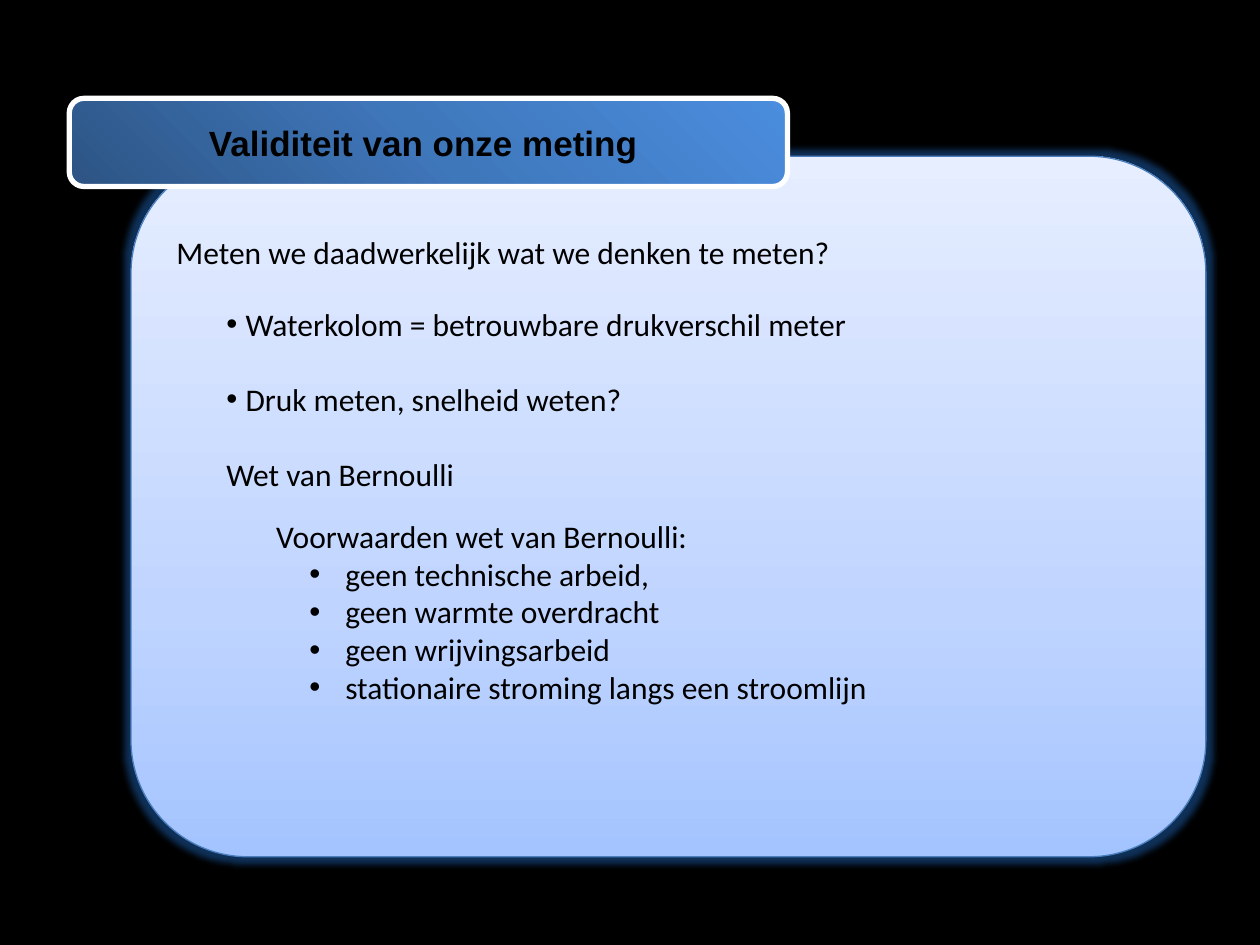
from lxml import etree
from pptx import Presentation
from pptx.dml.color import RGBColor
from pptx.enum.shapes import MSO_SHAPE
from pptx.enum.text import MSO_ANCHOR, MSO_AUTO_SIZE, PP_ALIGN
from pptx.oxml.ns import qn
from pptx.util import Pt

ROUNDED = MSO_SHAPE.ROUNDED_RECTANGLE
BLACK = RGBColor(0x00, 0x00, 0x00)
WHITE = RGBColor(0xFF, 0xFF, 0xFF)
PANEL_LINE = RGBColor(0x4B, 0x7E, 0xBC)
GLOW = RGBColor(0x25, 0x7A, 0xDE)
PANEL_STOPS = [
    (0, RGBColor(0xA4, 0xC4, 0xFF)),
    (35, RGBColor(0xBF, 0xD4, 0xFF)),
    (100, RGBColor(0xE6, 0xEE, 0xFF)),
]
BANNER_STOPS = [
    (0, RGBColor(0x2D, 0x54, 0x84)),
    (50, RGBColor(0x3F, 0x77, 0xBB)),
    (100, RGBColor(0x4B, 0x8D, 0xDE)),
]

# left, top, width, height in points
PANEL_BOX = (74.9, 89.3, 614.2, 400.3)
BANNER_BOX = (39.6, 56.2, 410.4, 50.4)
TITLE_BOX = (39.6, 56.2, 404.6, 50.4)
BODY_BOX = (100.8, 133, 560, 300)

TITLE = "Validiteit van onze meting"

# style: text indent, bullet hang (0 means no bullet), in points
STYLES = {
    "question": (0, 0),
    "point": (39.5, 11),
    "law": (28.5, 0),
    "conditions": (57, 0),
    "condition": (96.5, 20.5),
}
# style, space before in points, text
BODY = [
    ("question", 0, "Meten we daadwerkelijk wat we denken te meten?"),
    ("point", 19.5, "Waterkolom = betrouwbare drukverschil meter"),
    ("point", 21.5, "Druk meten, snelheid weten?"),
    ("law", 21.5, "Wet van Bernoulli"),
    ("conditions", 13.5, "Voorwaarden wet van Bernoulli:"),
    ("condition", 0, "geen technische arbeid,"),
    ("condition", 0, "geen warmte overdracht"),
    ("condition", 0, "geen wrijvingsarbeid"),
    ("condition", 0, "stationaire stroming langs een stroomlijn"),
]


def add_color(parent, color):
    return etree.SubElement(parent, qn("a:srgbClr"), val=str(color))


def add_gradient_box(slide, box, stops, angle, line_color, line_width):
    shape = slide.shapes.add_shape(ROUNDED, *map(Pt, box))
    shape.shadow.inherit = False
    shape.line.color.rgb = line_color
    shape.line.width = Pt(line_width)
    shape.fill.gradient()
    shape.fill.gradient_angle = angle
    stop_list = next(shape.element.iter(qn("a:gsLst")))
    stop_list.clear()
    for position, color in stops:
        stop = etree.SubElement(stop_list, qn("a:gs"), pos=str(position * 1000))
        add_color(stop, color)
    slide.shapes.title.element.addprevious(shape.element)
    return shape


def add_glow(shape, color, radius, opacity):
    effects = next(shape.element.iter(qn("a:effectLst")))
    glow = etree.SubElement(effects, qn("a:glow"), rad=str(Pt(radius)))
    etree.SubElement(add_color(glow, color), qn("a:alpha"), val=str(opacity * 1000))


def place_text(shape, box, anchor):
    shape.left, shape.top, shape.width, shape.height = map(Pt, box)
    frame = shape.text_frame
    frame.margin_left = frame.margin_right = frame.margin_top = frame.margin_bottom = 0
    frame.word_wrap = True
    frame.auto_size = MSO_AUTO_SIZE.NONE
    frame.vertical_anchor = anchor
    return frame


def format_font(paragraph, name, size, bold):
    font = paragraph.font
    font.name, font.size, font.bold = name, Pt(size), bold
    font.color.rgb = BLACK


def set_indent(paragraph, indent, hang):
    properties = paragraph._p.get_or_add_pPr()
    properties.set("marL", str(Pt(indent)))
    properties.set("indent", str(-Pt(hang)))
    if hang:
        etree.SubElement(properties, qn("a:buFont"), typeface="Arial")
        etree.SubElement(properties, qn("a:buChar"), char="•")
    else:
        etree.SubElement(properties, qn("a:buNone"))


def fill_body(frame):
    for index, (style, space, text) in enumerate(BODY):
        paragraph = frame.add_paragraph() if index else frame.paragraphs[0]
        paragraph.text = text
        paragraph.alignment = PP_ALIGN.LEFT
        paragraph.line_spacing = 1.0
        paragraph.space_before = Pt(space)
        set_indent(paragraph, *STYLES[style])
        format_font(paragraph, "Calibri", 18, False)


def main():
    presentation = Presentation()
    presentation.slide_width, presentation.slide_height = Pt(720), Pt(540)
    slide = presentation.slides.add_slide(presentation.slide_layouts[1])
    slide.background.fill.solid()
    slide.background.fill.fore_color.rgb = BLACK

    panel = add_gradient_box(slide, PANEL_BOX, PANEL_STOPS, 90, PANEL_LINE, 0.75)
    add_glow(panel, GLOW, 8, 40)
    add_gradient_box(slide, BANNER_BOX, BANNER_STOPS, 45, WHITE, 3)

    title = place_text(slide.shapes.title, TITLE_BOX, MSO_ANCHOR.MIDDLE).paragraphs[0]
    title.text = TITLE
    title.alignment = PP_ALIGN.CENTER
    format_font(title, "Arial", 20, True)

    fill_body(place_text(slide.placeholders[1], BODY_BOX, MSO_ANCHOR.TOP))
    presentation.save("out.pptx")


if __name__ == "__main__":
    main()
